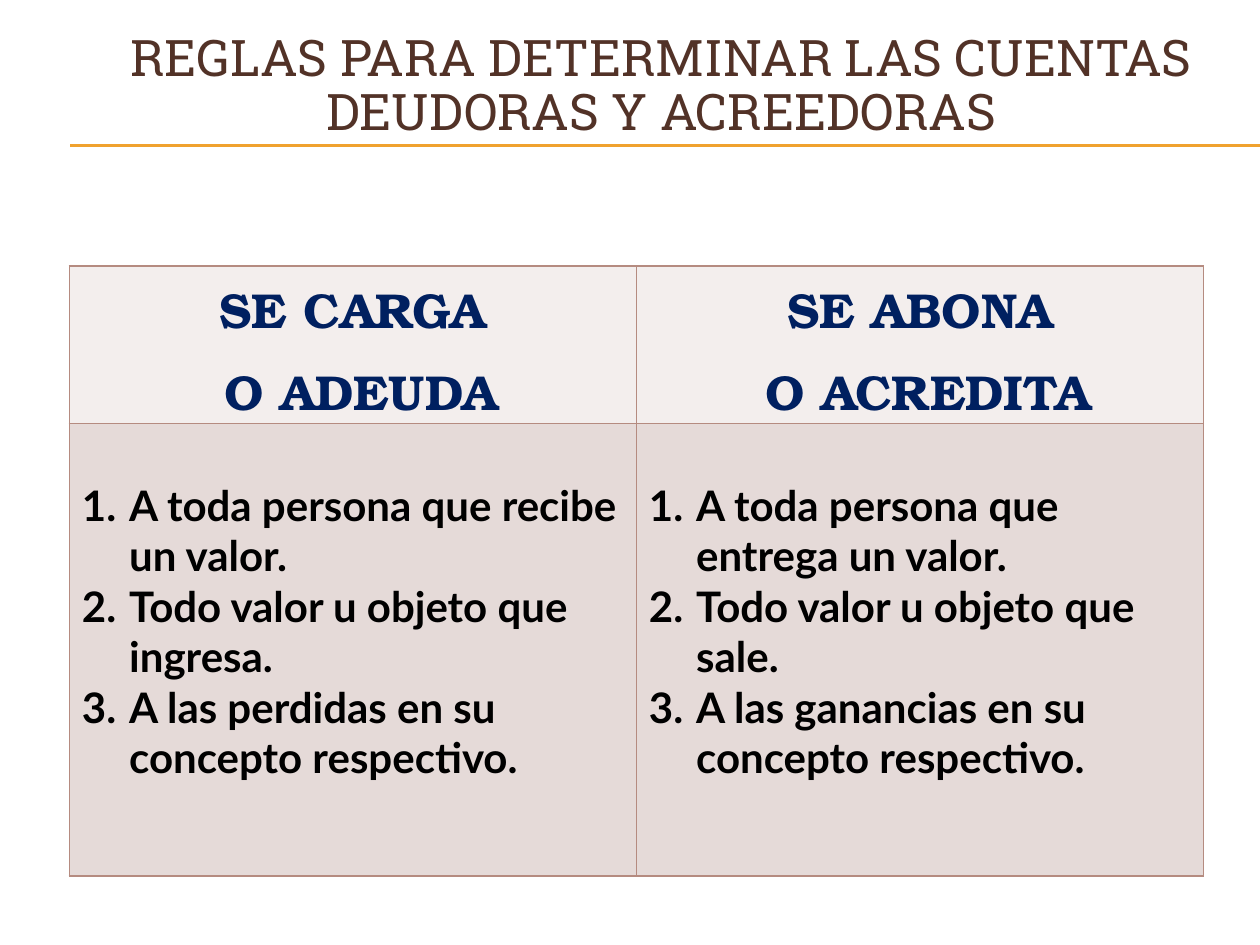
from pptx import Presentation
from pptx.dml.color import RGBColor
from pptx.enum import shapes, text
from pptx.oxml.ns import qn
from pptx.util import Pt
from lxml import etree

COLORS = {
    "title": "523227", "rule": "F0A22E", "border": "B58B80",
    "heading": "002060", "body": "000000",
    "heading_fill": "F3EEED", "body_fill": "E5DAD8",
}
FORMATS = {
    "title": {"name": "Roboto Slab", "size": Pt(28.8), "bold": False},
    "heading": {"name": "TeX Gyre Bonum", "size": Pt(28), "bold": True},
    "body": {"name": "Lato", "size": Pt(24), "bold": True},
}
PARAGRAPHS = {
    "title": {"alignment": text.PP_ALIGN.CENTER, "line_spacing": 0.9},
    "heading": {"alignment": text.PP_ALIGN.CENTER, "space_before": Pt(5.6)},
    "body": {"alignment": text.PP_ALIGN.LEFT},
}
CELLS = {
    "heading": {"margin_top": Pt(3.6)},
    "body": {"margin_top": Pt(32.4)},
}
ACCOUNTS = [
    (["SE CARGA", " O ADEUDA"],
     ["A toda persona que recibe un valor.",
      "Todo valor u objeto que ingresa.",
      "A las perdidas en su concepto respectivo."]),
    (["SE ABONA", " O ACREDITA"],
     ["A toda persona que entrega un valor.",
      "Todo valor u objeto que sale.",
      "A las ganancias en su concepto respectivo."]),
]


def apply(target, values):
    for name, value in values.items():
        setattr(target, name, value)


def color(name):
    return RGBColor.from_string(COLORS[name])


class RulesSlide:
    def __init__(self, slide):
        self.slide = slide

    def add_lines(self, frame, lines, style):
        for index, line in enumerate(lines):
            paragraph = frame.paragraphs[0] if index == 0 else frame.add_paragraph()
            apply(paragraph, PARAGRAPHS[style])
            run = paragraph.add_run()
            run.text = line
            apply(run.font, FORMATS[style])
            run.font.color.rgb = color(style)

    def number(self, frame):
        for paragraph in frame.paragraphs:
            properties = paragraph._p.get_or_add_pPr()
            properties.set("marL", str(Pt(27)))
            properties.set("indent", str(-Pt(27)))
            etree.SubElement(properties, qn("a:buFont"), typeface="+mj-lt")
            etree.SubElement(properties, qn("a:buAutoNum"), type="arabicPeriod")

    def rule(self, left, right, y):
        rule = self.slide.shapes.add_connector(
            shapes.MSO_CONNECTOR.STRAIGHT, Pt(left), Pt(y), Pt(right), Pt(y))
        rule.line.width = Pt(0.75)
        rule.line.color.rgb = color("rule")
        etree.SubElement(rule._element.spPr, qn("a:effectLst"))

    def title(self, left, top, width, height, wording):
        title = self.slide.shapes.add_textbox(Pt(left), Pt(top), Pt(width), Pt(height))
        apply(title.text_frame, {"word_wrap": True,
                                 "vertical_anchor": text.MSO_ANCHOR.MIDDLE})
        self.add_lines(title.text_frame, [wording], "title")

    def border(self, cell):
        properties = cell._tc.get_or_add_tcPr()
        for side in ("lnL", "lnR", "lnT", "lnB"):
            edge = etree.SubElement(properties, qn(f"a:{side}"), w=str(Pt(1)))
            fill = etree.SubElement(edge, qn("a:solidFill"))
            etree.SubElement(fill, qn("a:srgbClr"), val=COLORS["border"])

    def cell(self, cell, lines, style):
        self.border(cell)
        cell.fill.solid()
        cell.fill.fore_color.rgb = color(f"{style}_fill")
        apply(cell, CELLS[style])
        self.add_lines(cell.text_frame, lines, style)

    def table(self, left, top, width, heights, accounts):
        table = self.slide.shapes.add_table(
            len(heights), len(accounts), Pt(left), Pt(top),
            Pt(width), Pt(sum(heights))).table
        apply(table, {"first_row": False, "horz_banding": False})
        for row, height in zip(table.rows, heights):
            row.height = Pt(height)
        for column, (heading, rules) in enumerate(accounts):
            self.cell(table.cell(0, column), heading, "heading")
            self.cell(table.cell(1, column), rules, "body")
            self.number(table.cell(1, column).text_frame)


def main():
    deck = Presentation()
    apply(deck, {"slide_width": Pt(720), "slide_height": Pt(540)})
    page = RulesSlide(deck.slides.add_slide(deck.slide_layouts[6]))
    for y in (82.8, 83.5):
        page.rule(40.3, 720, y)
    page.title(36, 16.6, 684, 66.2,
               "REGLAS PARA DETERMINAR LAS CUENTAS DEUDORAS Y ACREEDORAS")
    page.table(39.6, 152, 648, [90, 258.5], ACCOUNTS)
    deck.save("out.pptx")


if __name__ == "__main__":
    main()
